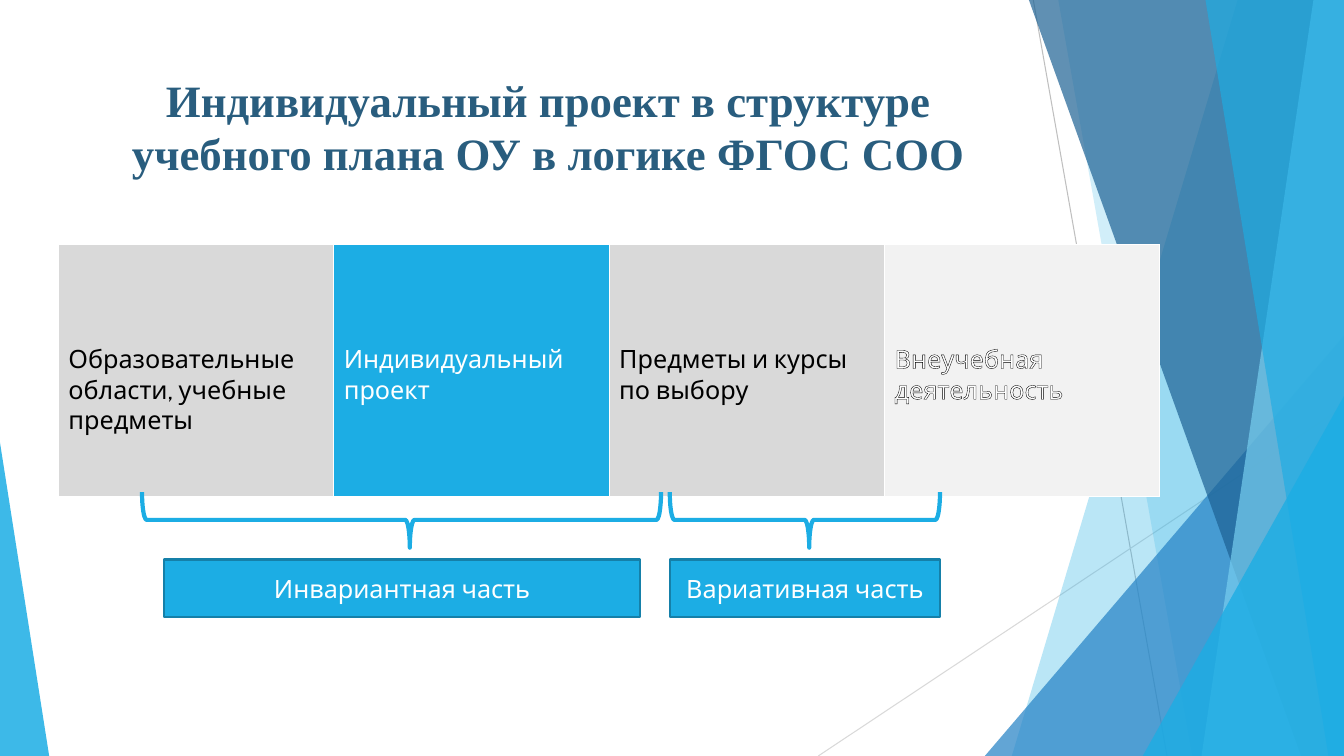
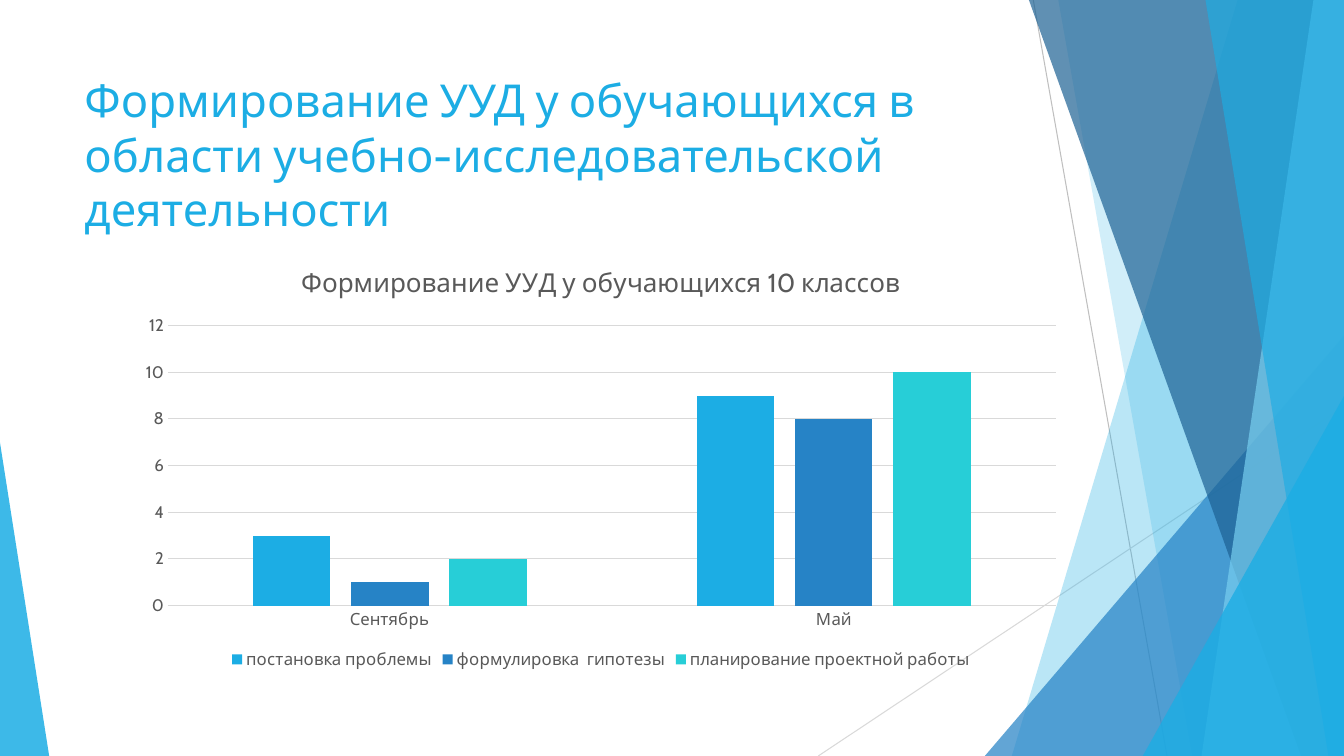
from typing import NamedTuple

from lxml import etree
from pptx import Presentation
from pptx.chart.data import CategoryChartData
from pptx.dml.color import RGBColor
from pptx.enum.chart import XL_CHART_TYPE, XL_LEGEND_POSITION, XL_TICK_MARK
from pptx.enum.shapes import MSO_CONNECTOR, MSO_SHAPE
from pptx.enum.text import MSO_ANCHOR, PP_ALIGN
from pptx.oxml.ns import qn
from pptx.util import Cm, Pt

COLUMNS = XL_CHART_TYPE.COLUMN_CLUSTERED
LEGEND_BOTTOM = XL_LEGEND_POSITION.BOTTOM
NO_TICK = XL_TICK_MARK.NONE
STRAIGHT = MSO_CONNECTOR.STRAIGHT
RECTANGLE = MSO_SHAPE.RECTANGLE
TRIANGLE = MSO_SHAPE.ISOSCELES_TRIANGLE
BRACE = MSO_SHAPE.LEFT_BRACE
TOP, MIDDLE = MSO_ANCHOR.TOP, MSO_ANCHOR.MIDDLE
LEFT, CENTER = PP_ALIGN.LEFT, PP_ALIGN.CENTER

WHITE = RGBColor(0xFF, 0xFF, 0xFF)
BLACK = RGBColor(0x00, 0x00, 0x00)
SKY = RGBColor(0x1C, 0xAD, 0xE4)
SKY_DARK = RGBColor(0x15, 0x80, 0xA9)
SKY_LIGHT = RGBColor(0x77, 0xCE, 0xEF)
BLUE = RGBColor(0x26, 0x83, 0xC6)
NAVY = RGBColor(0x1D, 0x62, 0x94)
TEAL = RGBColor(0x27, 0xCE, 0xD7)
TITLE_BLUE = RGBColor(0x29, 0x5D, 0x7E)
TEXT_GREY = RGBColor(0x59, 0x59, 0x59)
LINE_GREY = RGBColor(0xBF, 0xBF, 0xBF)
GRID_GREY = RGBColor(0xD9, 0xD9, 0xD9)
PALE_GREY = RGBColor(0xF2, 0xF2, 0xF2)

BODY_FONT = {"name": "Cabin", "size": Pt(18), "bold": False}
CHART_FONT = {**BODY_FONT, "size": Pt(12)}
CHART_TITLE_FONT = {**BODY_FONT, "size": Pt(18.6)}
SERIF_TITLE = {"name": "Times New Roman", "size": Pt(32), "bold": True}
PLAIN_TITLE = {**BODY_FONT, "size": Pt(32.4)}


class Box(NamedTuple):
    left: float
    top: float
    width: float
    height: float

    def lengths(self):
        return [Cm(value) for value in self]


PAGE = Box(0, 0, 33.87, 19.05)
TITLE = Box(1.88, 1.7, 23.88, 3.66)
CURRICULUM = Box(1.47, 6.17, 27.76, 6.35)
CHART = Box(3.2, 6.2, 23.88, 10.77)


def apply_formats(target, formats):
    for name, value in formats.items():
        setattr(target, name, value)


def style_font(font, color, formats):
    apply_formats(font, formats)
    font.color.rgb = color


def style_line(line, color, width):
    line.color.rgb = color
    line.width = Pt(width)


def fill_shape(shape, color, opacity=100):
    shape.shadow.inherit = False
    shape.fill.solid()
    shape.fill.fore_color.rgb = color
    if opacity < 100:
        tint = shape.element.spPr.find(qn("a:solidFill"))[0]
        etree.SubElement(tint, qn("a:alpha"), val=str(opacity * 1000))


def write(frame, lines, color, formats, align=LEFT):
    for index, line in enumerate(lines):
        para = frame.paragraphs[0] if index == 0 else frame.add_paragraph()
        para.alignment = align
        span = para.add_run()
        span.text = line
        style_font(span.font, color, formats)


def outline_text(frame, color, width):
    for para in frame.paragraphs:
        for span in para.runs:
            properties = span.font._element
            line = etree.Element(qn("a:ln"), w=str(Pt(width)))
            solid = etree.SubElement(line, qn("a:solidFill"))
            etree.SubElement(solid, qn("a:srgbClr"), val=str(color))
            properties.insert(0, line)


def add_ray(page, start, end, color):
    ray = page.shapes.add_connector(STRAIGHT, *map(Cm, start + end))
    style_line(ray.line, color, 0.75)
    etree.SubElement(ray.element.spPr, qn("a:effectLst"))


def add_facet(page, box, top_x, bottom_x, color, opacity):
    right, bottom = box.left + box.width, box.top + box.height
    corners = [(right, box.top), (right, bottom), (box.left + bottom_x, bottom)]
    builder = page.shapes.build_freeform(Cm(box.left + top_x), Cm(box.top), 1.0)
    builder.add_line_segments([(Cm(x), Cm(y)) for x, y in corners], close=True)
    facet = builder.convert_to_shape()
    fill_shape(facet, color, opacity)
    facet.line.fill.background()


def add_corner(page, box, width, height, apex, color, opacity):
    left = box.left + (box.width - width) * apex
    place = Box(left, box.top + box.height - height, width, height)
    corner = page.shapes.add_shape(TRIANGLE, *place.lengths())
    corner.adjustments[0] = apex
    fill_shape(corner, color, opacity)
    corner.line.fill.background()


def add_backdrop(page, box):
    add_ray(page, (26.04, 0), (29.41, box.height), LINE_GREY)
    add_ray(page, (box.width, 10.24), (20.62, box.height), GRID_GREY)
    add_facet(page, box, 31.19, 25.5, SKY, 30)
    add_facet(page, box, 26.67, 30.05, SKY, 20)
    add_corner(page, box, 9.05, 10.59, 1, BLUE, 72)
    add_facet(page, box, 25.93, 32.79, NAVY, 70)
    add_facet(page, box, 33.1, 30.28, SKY_LIGHT, 70)
    add_facet(page, box, 30.38, 33.48, SKY, 65)
    add_corner(page, box, 5.07, 9.07, 1, SKY, 80)
    add_corner(page, box, 1.24, 7.9, 0, SKY, 85)


def add_title(page, box, text, color, formats, align):
    frame = page.shapes.add_textbox(*box.lengths()).text_frame
    apply_formats(frame, {"word_wrap": True, "vertical_anchor": TOP})
    write(frame, [text], color, formats, align)


def start_page(deck, title, color, formats, align=LEFT):
    page = deck.slides.add_slide(deck.slide_layouts[6])
    add_backdrop(page, PAGE)
    add_title(page, TITLE, title, color, formats, align)
    return page


def add_subjects(page, box):
    subjects = [
        (["Образовательные области, учебные предметы"], GRID_GREY, BLACK),
        (["Индивидуальный проект"], SKY, WHITE),
        (["Предметы и курсы", "по выбору"], GRID_GREY, BLACK),
        (["Внеучебная деятельность"], PALE_GREY, WHITE),
    ]
    table = page.shapes.add_table(1, len(subjects), *box.lengths()).table
    apply_formats(table, {"first_row": False, "horz_banding": False})
    for cell, (lines, fill, color) in zip(table.rows[0].cells, subjects):
        cell.margin_top = Cm(2.5)
        cell.fill.solid()
        cell.fill.fore_color.rgb = fill
        write(cell.text_frame, lines, color, BODY_FONT)
    outline_text(table.cell(0, 3).text_frame, BLACK, 0.75)


def add_brace(page, box):
    left = box.left + (box.width - box.height) / 2
    top = box.top + (box.height - box.width) / 2
    upright = Box(left, top, box.height, box.width)
    brace = page.shapes.add_shape(BRACE, *upright.lengths())
    brace.rotation = 270
    brace.shadow.inherit = False
    brace.adjustments[0], brace.adjustments[1] = 0.083, 0.516
    brace.fill.background()
    style_line(brace.line, SKY, 3)


def add_part_label(page, box, text):
    label = page.shapes.add_shape(RECTANGLE, *box.lengths())
    fill_shape(label, SKY)
    style_line(label.line, SKY_DARK, 1.5)
    frame = label.text_frame
    apply_formats(frame, {"word_wrap": True, "vertical_anchor": MIDDLE})
    write(frame, [text], WHITE, BODY_FONT, CENTER)


def add_curriculum(page, box):
    add_subjects(page, box)
    bottom = box.top + box.height
    parts = [
        ("Инвариантная часть", 2.11, 13.08, 2.67, 11.99),
        ("Вариативная часть", 15.41, 6.81, 15.41, 6.81),
    ]
    for text, brace_x, brace_width, label_x, label_width in parts:
        add_brace(page, Box(box.left + brace_x, bottom - 0.12, brace_width, 1.4))
        place = Box(box.left + label_x, bottom + 1.58, label_width, 1.45)
        add_part_label(page, place, text)


def add_skills_chart(page, box):
    skills = [
        ("постановка проблемы", (3, 9), SKY),
        ("формулировка  гипотезы", (1, 8), BLUE),
        ("планирование проектной работы", (2, 10), TEAL),
    ]
    data = CategoryChartData()
    data.categories = ["Сентябрь", "Май"]
    for name, values, _ in skills:
        data.add_series(name, values)
    chart = page.shapes.add_chart(COLUMNS, *box.lengths(), data).chart
    style_font(chart.font, TEXT_GREY, CHART_FONT)

    chart.has_title = True
    write(chart.chart_title.text_frame, ["Формирование УУД у обучающихся 10 классов"],
          TEXT_GREY, CHART_TITLE_FONT, CENTER)
    chart.chart_title.include_in_layout = False

    chart.has_legend = True
    apply_formats(chart.legend, {"position": LEGEND_BOTTOM, "include_in_layout": False})
    style_font(chart.legend.font, TEXT_GREY, CHART_FONT)

    plot = chart.plots[0]
    apply_formats(plot, {"gap_width": 219, "overlap": -27, "vary_by_categories": False})
    for series, (_, _, color) in zip(plot.series, skills):
        series.format.fill.solid()
        series.format.fill.fore_color.rgb = color

    for axis in (chart.category_axis, chart.value_axis):
        apply_formats(axis, {"major_tick_mark": NO_TICK, "minor_tick_mark": NO_TICK})
        style_font(axis.tick_labels.font, TEXT_GREY, CHART_FONT)
    style_line(chart.category_axis.format.line, GRID_GREY, 0.75)
    scale = {"minimum_scale": 0, "maximum_scale": 12, "major_unit": 2}
    apply_formats(chart.value_axis, scale)
    chart.value_axis.format.line.fill.background()
    style_line(chart.value_axis.major_gridlines.format.line, GRID_GREY, 0.75)


def main():
    deck = Presentation()
    apply_formats(deck, {"slide_width": Cm(PAGE.width), "slide_height": Cm(PAGE.height)})
    page = start_page(
        deck, "Индивидуальный проект в структуре учебного плана ОУ в логике ФГОС СОО",
        TITLE_BLUE, SERIF_TITLE, CENTER)
    add_curriculum(page, CURRICULUM)
    page = start_page(
        deck, "Формирование УУД у обучающихся в области учебно-исследовательской деятельности",
        SKY, PLAIN_TITLE)
    add_skills_chart(page, CHART)
    deck.save("out.pptx")


if __name__ == "__main__":
    main()
